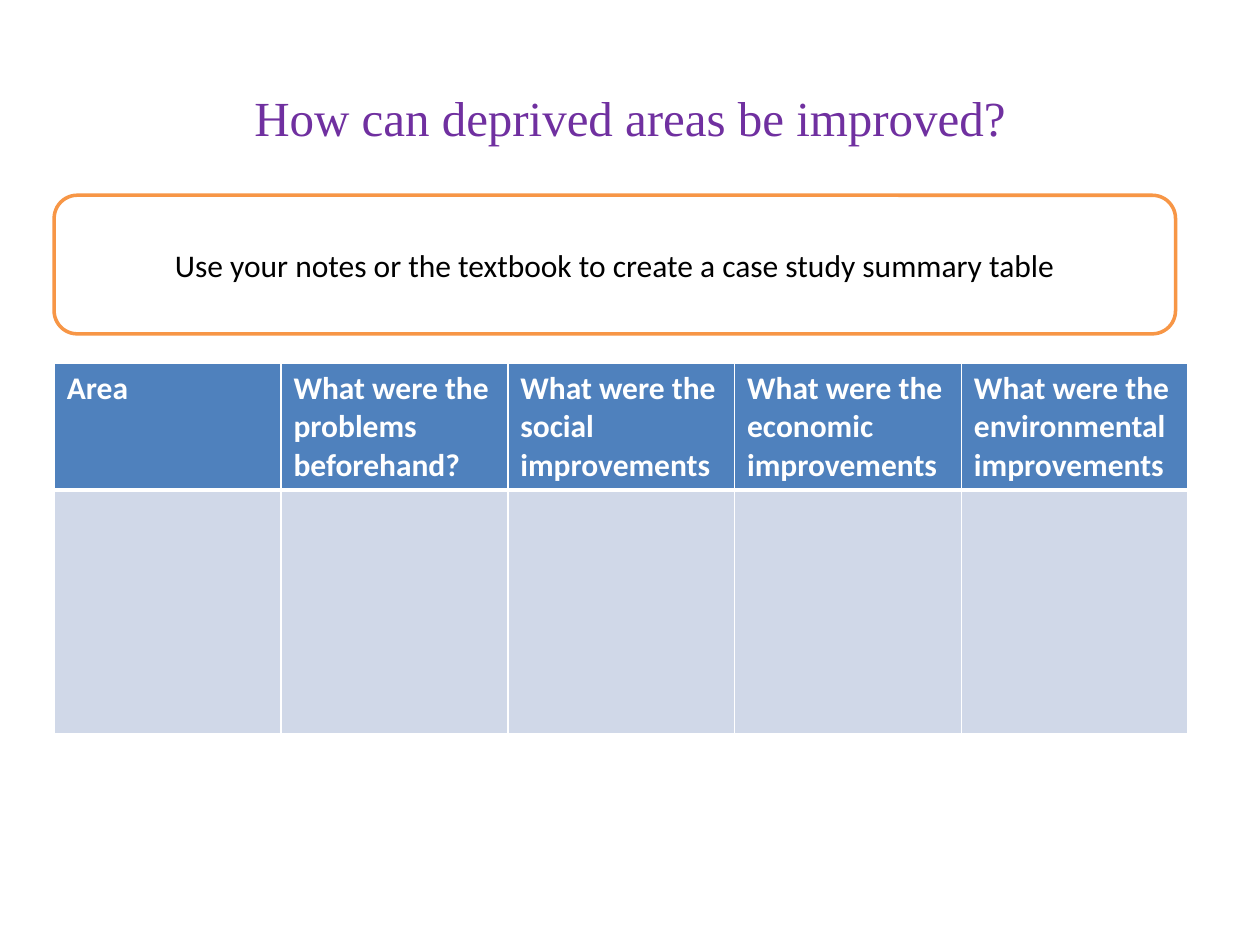
from lxml.etree import SubElement
from pptx import Presentation
from pptx.dml.color import RGBColor
from pptx.enum.shapes import MSO_SHAPE as Shape
from pptx.enum.text import MSO_ANCHOR as Anchor, PP_ALIGN as Align
from pptx.oxml.ns import qn
from pptx.util import Inches, Pt

PURPLE = RGBColor(0x70, 0x30, 0xA0)
ORANGE = RGBColor(0xF7, 0x96, 0x46)
BLUE = RGBColor(0x4F, 0x81, 0xBD)
PALE_BLUE = RGBColor(0xD0, 0xD8, 0xE8)
WHITE = RGBColor(0xFF, 0xFF, 0xFF)
BLACK = RGBColor(0, 0, 0)

QUESTIONS = [
    "Area",
    "What were the problems beforehand?",
    "What were the social improvements",
    "What were the economic improvements",
    "What were the environmental improvements",
]


def write(frame, text, size, color, font="Calibri", align=Align.LEFT, bold=False):
    frame.word_wrap = True
    paragraph = frame.paragraphs[0]
    paragraph.alignment = align
    run = paragraph.add_run()
    run.text = text
    run.font.size = Pt(size)
    run.font.name = font
    run.font.bold = bold
    run.font.color.rgb = color


def set_borders(cell, bottom=1, top=1):
    """Draw white cell borders; widths are in points."""
    props = cell._tc.get_or_add_tcPr()
    for side, width in (("L", 1), ("R", 1), ("T", top), ("B", bottom)):
        line = SubElement(props, qn(f"a:ln{side}"), w=str(Pt(width)))
        fill = SubElement(line, qn("a:solidFill"))
        SubElement(fill, qn("a:srgbClr"), val=str(WHITE))


prs = Presentation()
prs.slide_width, prs.slide_height = Inches(10), Inches(7.5)
slide = prs.slides.add_slide(prs.slide_layouts[6])

# Title
title = slide.shapes.add_textbox(Inches(0.5), Inches(0.3), Inches(9), Inches(1.25))
title.text_frame.vertical_anchor = Anchor.MIDDLE
write(title.text_frame, "How can deprived areas be improved?", 28, PURPLE,
      "Times New Roman", Align.CENTER)

# Case study table: question headings above empty answer cells
summary = slide.shapes.add_table(2, len(QUESTIONS), Inches(0.43), Inches(2.88),
                                 Inches(9), Inches(2.94)).table
summary.rows[0].height = Inches(1.01)
summary.rows[1].height = Inches(1.93)
for column, question in enumerate(QUESTIONS):
    heading, answer = summary.cell(0, column), summary.cell(1, column)
    set_borders(heading, bottom=3)
    set_borders(answer, top=3)
    for cell, color in ((heading, BLUE), (answer, PALE_BLUE)):
        cell.fill.solid()
        cell.fill.fore_color.rgb = color
    write(heading.text_frame, question, 18, WHITE, bold=True)

# Task instruction
task = slide.shapes.add_shape(Shape.ROUNDED_RECTANGLE, Inches(0.43), Inches(1.55),
                              Inches(8.9), Inches(1.1))
task.shadow.inherit = False
task.fill.solid()
task.fill.fore_color.rgb = WHITE
task.line.color.rgb = ORANGE
task.line.width = Pt(2)
task.text_frame.vertical_anchor = Anchor.MIDDLE
write(task.text_frame,
      "Use your notes or the textbook to create a case study summary table",
      18, BLACK, align=Align.CENTER)

prs.save("out.pptx")
